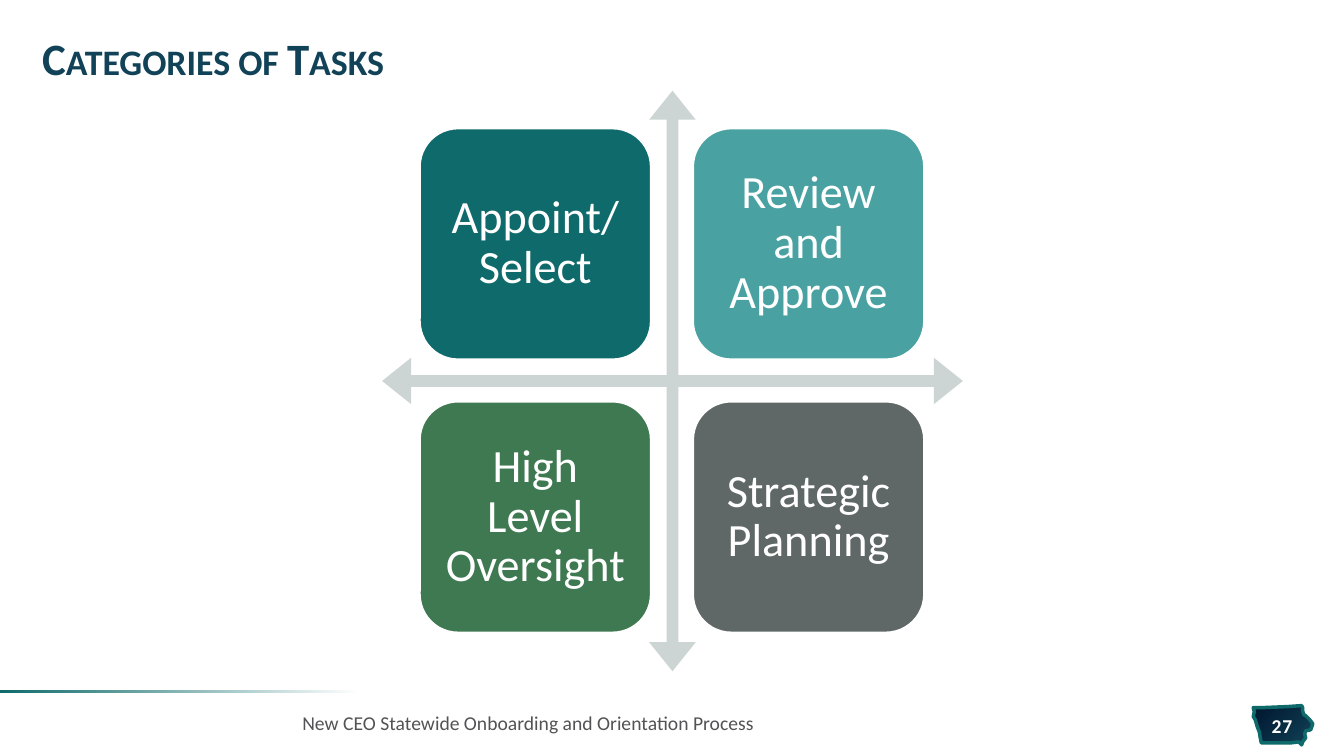
from pptx import Presentation
from pptx import util as u
from pptx.dml import color
from pptx.enum import shapes, text

THEME = {
    "font": "Calibri",
    "navy": "114257", "midnight": "00162E", "teal": "0F6A6B", "white": "FFFFFF",
    "arrow": "CCD4D4", "footer": "535355",
    "title_size": 32, "task_size": 33, "small_size": 14,
}

TITLE = "Categories of Tasks"
FOOTER = "New CEO Statewide Onboarding and Orientation Process"
PAGE_NUMBER = "27"
TASKS = [
    ("Appoint/ Select", "0F6A6B"),
    ("Review and Approve", "49A1A2"),
    ("High Level Oversight", "3E7951"),
    ("Strategic Planning", "5F6866"),
]
BADGE_OUTLINE = [
    (1291, 700), (1277, 701), (1253, 702), (1243, 702), (1244, 706),
    (1243, 711), (1245, 714), (1247, 721), (1249, 726), (1250, 732),
    (1251, 737), (1280, 737), (1288, 736), (1291, 739), (1292, 736),
    (1295, 732), (1294, 728), (1295, 725), (1300, 724), (1302, 718),
    (1299, 714), (1295, 710), (1293, 709), (1292, 705), (1292, 702),
]

ARROW_LEFT, ARROW_TOP, ARROW_SIDE = 3.79, 0.9, 5.76
TILE_SIDE, TILE_STEP, TILE_OFFSET = 2.3, 2.71, 0.37


def rgb(value):
    return color.RGBColor.from_string(value)


def write(shape, content, size, ink, insets, bold=False, align=None, spacing=None):
    frame = shape.text_frame
    frame.word_wrap = True
    frame.vertical_anchor = text.MSO_ANCHOR.MIDDLE
    frame.margin_left = frame.margin_right = u.Inches(insets[0])
    frame.margin_top = frame.margin_bottom = u.Inches(insets[1])
    frame.text = content
    paragraph = frame.paragraphs[0]
    paragraph.alignment = align
    paragraph.line_spacing = spacing
    run = paragraph.runs[0]
    run.font.name = THEME["font"]
    run.font.size = u.Pt(size)
    run.font.bold = bold
    run.font.color.rgb = rgb(ink)
    return run


def add_text(slide, box, *args, **options):
    shape = slide.shapes.add_textbox(*map(u.Inches, box))
    return write(shape, *args, **options)


def add_filled(slide, preset, box, fill):
    shape = slide.shapes.add_shape(preset, *map(u.Inches, box))
    shape.shadow.inherit = False
    shape.fill.solid()
    shape.fill.fore_color.rgb = rgb(fill)
    shape.line.fill.background()
    return shape


def set_gradient(shape, stops, angle):
    shape.fill.gradient()
    shape.fill.gradient_angle = angle
    for stop, (position, value) in zip(shape.fill.gradient_stops, stops):
        stop.position = position
        stop.color.rgb = rgb(value)


def add_badge(slide):
    builder = slide.shapes.build_freeform(*BADGE_OUTLINE[0], scale=u.Inches(0.01))
    builder.add_line_segments(BADGE_OUTLINE[1:], close=True)
    badge = builder.convert_to_shape()
    badge.shadow.inherit = False
    set_gradient(badge, [(0, THEME["midnight"]), (1, THEME["navy"])], 315)
    badge.line.color.rgb = rgb(THEME["teal"])
    badge.line.width = u.Pt(2.5)
    number = add_text(slide, (12.46, 7.08, 0.51, 0.23), PAGE_NUMBER,
                      THEME["small_size"], THEME["white"], (0, 0.05),
                      bold=True, align=text.PP_ALIGN.CENTER)
    number.font._element.set("spc", "50")


def add_task_grid(slide):
    arrow = add_filled(slide, shapes.MSO_SHAPE.QUAD_ARROW,
                       (ARROW_LEFT, ARROW_TOP, ARROW_SIDE, ARROW_SIDE), THEME["arrow"])
    for index, ratio in enumerate((0.02, 0.04, 0.05)):
        arrow.adjustments[index] = ratio
    for index, (label, fill) in enumerate(TASKS):
        row, column = divmod(index, 2)
        left = ARROW_LEFT + TILE_OFFSET + column * TILE_STEP
        top = ARROW_TOP + TILE_OFFSET + row * TILE_STEP
        tile = add_filled(slide, shapes.MSO_SHAPE.ROUNDED_RECTANGLE,
                          (left, top, TILE_SIDE, TILE_SIDE), fill)
        tile.line.color.rgb = rgb(THEME["white"])
        tile.line.width = u.Pt(2)
        write(tile, label, THEME["task_size"], THEME["white"], (0.14, 0.14),
              align=text.PP_ALIGN.CENTER, spacing=0.9)


def main():
    presentation = Presentation()
    presentation.slide_width = u.Inches(13.33)
    presentation.slide_height = u.Inches(7.5)
    slide = presentation.slides.add_slide(presentation.slide_layouts[6])

    add_badge(slide)
    rule = add_filled(slide, shapes.MSO_SHAPE.RECTANGLE, (0, 6.85, 3.8, 0.03), THEME["teal"])
    set_gradient(rule, [(0.06, THEME["white"]), (1, THEME["teal"])], 180)
    title = add_text(slide, (0.32, 0.24, 12.69, 0.75), TITLE, THEME["title_size"],
                     THEME["navy"], (0.1, 0.05), bold=True, spacing=0.85)
    title.font._element.set("cap", "small")
    add_task_grid(slide)
    add_text(slide, (2.9, 6.97, 9.06, 0.4), FOOTER, THEME["small_size"],
             THEME["footer"], (0.1, 0.05))

    presentation.save("out.pptx")


if __name__ == "__main__":
    main()
